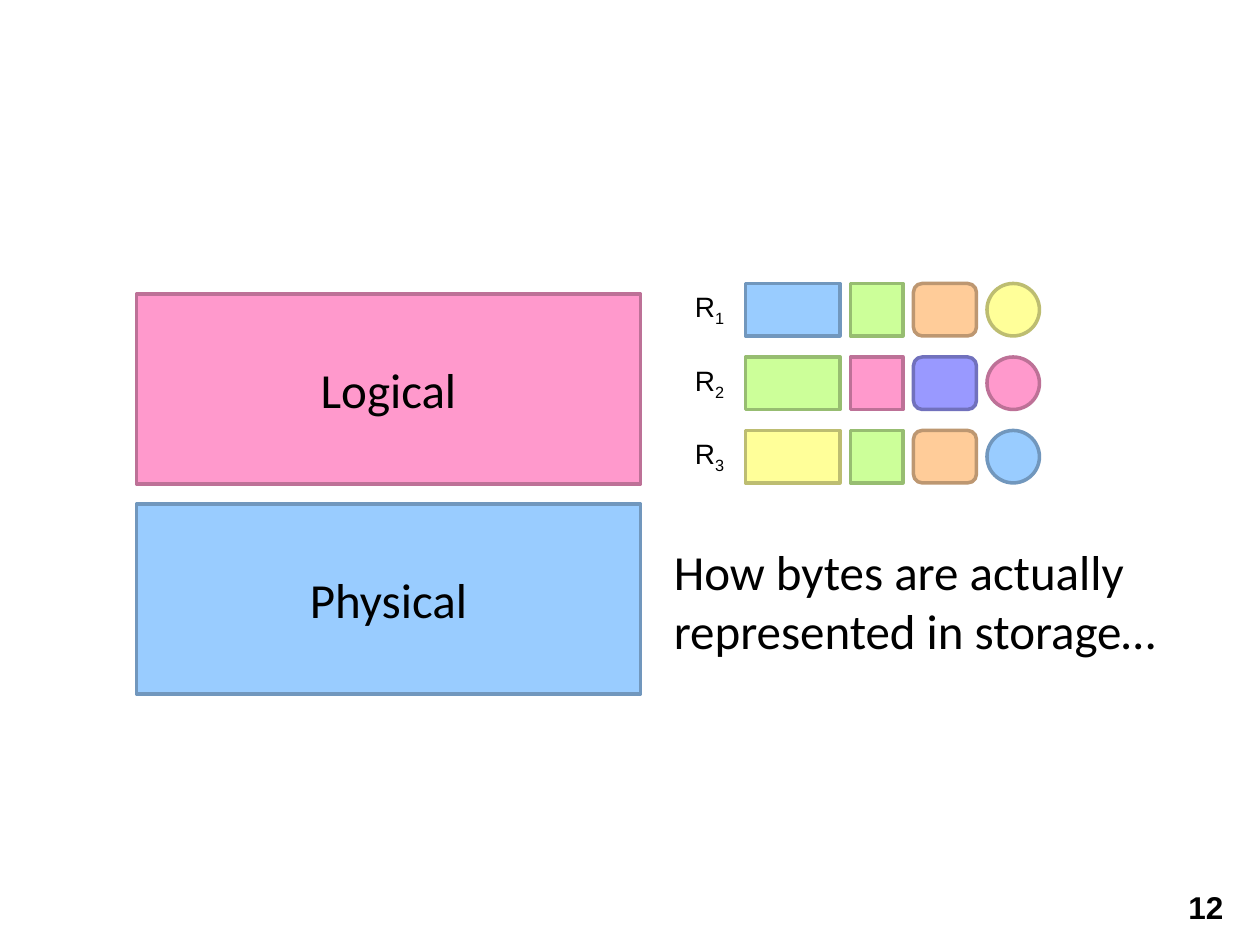
from dataclasses import dataclass

from pptx import Presentation
from pptx.dml.color import RGBColor
from pptx.enum.shapes import MSO_SHAPE
from pptx.enum.text import MSO_ANCHOR, PP_ALIGN
from pptx.oxml.ns import qn
from pptx.util import Pt

PX = 7620  # EMU per px, 120 px to the inch

RECT, ROUND, OVAL = MSO_SHAPE.RECTANGLE, MSO_SHAPE.ROUNDED_RECTANGLE, MSO_SHAPE.OVAL
MIDDLE, CENTER = MSO_ANCHOR.MIDDLE, PP_ALIGN.CENTER

BLACK = RGBColor(0x00, 0x00, 0x00)
PINK = RGBColor(0xFF, 0x99, 0xCC)
BLUE = RGBColor(0x99, 0xCC, 0xFF)
GREEN = RGBColor(0xCC, 0xFF, 0x99)
ORANGE = RGBColor(0xFF, 0xCC, 0x99)
YELLOW = RGBColor(0xFF, 0xFF, 0x99)
VIOLET = RGBColor(0x99, 0x99, 0xFF)
OUTLINE = {
    PINK: RGBColor(0xBD, 0x71, 0x97),
    BLUE: RGBColor(0x71, 0x97, 0xBD),
    GREEN: RGBColor(0x97, 0xBD, 0x71),
    ORANGE: RGBColor(0xBD, 0x97, 0x71),
    YELLOW: RGBColor(0xBD, 0xBD, 0x71),
    VIOLET: RGBColor(0x71, 0x71, 0xBD),
}

BODY = {"name": "Calibri", "size": Pt(28)}
LABEL = {"name": "Arial", "size": Pt(16)}
NUMBER = {"name": "Arial", "size": Pt(18), "bold": True}


@dataclass(frozen=True)
class Area:
    left: int
    top: int
    width: int
    height: int

    def emu(self) -> tuple[int, ...]:
        return tuple(v * PX for v in (self.left, self.top, self.width, self.height))


@dataclass(frozen=True)
class Field:
    kind: MSO_SHAPE
    left: int
    width: int


@dataclass(frozen=True)
class Record:
    index: str
    colors: tuple[RGBColor, ...]


@dataclass(frozen=True)
class Level:
    name: str
    top: int
    color: RGBColor


LEVELS = (Level("Logical", 280, PINK), Level("Physical", 480, BLUE))
FIELDS = (
    Field(RECT, 710, 90),
    Field(RECT, 810, 50),
    Field(ROUND, 870, 60),
    Field(OVAL, 940, 50),
)
RECORDS = (
    Record("1", (BLUE, GREEN, ORANGE, YELLOW)),
    Record("2", (GREEN, PINK, VIOLET, PINK)),
    Record("3", (YELLOW, GREEN, ORANGE, BLUE)),
)
RECORD_TOP, RECORD_STEP, RECORD_HEIGHT = 270, 70, 50


def add_span(para, text: str, style: dict):
    span = para.add_run()
    span.text = text
    for key, value in style.items():
        setattr(span.font, key, value)
    span.font.color.rgb = BLACK
    return span


def add_box(shapes, kind: MSO_SHAPE, area: Area, color: RGBColor):
    box = shapes.add_shape(kind, *area.emu())
    box.shadow.inherit = False
    box.fill.solid()
    box.fill.fore_color.rgb = color
    box.line.color.rgb = OUTLINE[color]
    box.line.width = Pt(2)
    return box


def add_text(shapes, area: Area, text: str, style: dict, wrap: bool = True):
    box = shapes.add_textbox(*area.emu())
    box.text_frame.word_wrap = wrap
    para = box.text_frame.paragraphs[0]
    add_span(para, text, style)
    return para


def add_level(page, level: Level) -> None:
    box = add_box(page.shapes, RECT, Area(130, level.top, 480, 181), level.color)
    box.text_frame.vertical_anchor = MIDDLE
    para = box.text_frame.paragraphs[0]
    para.alignment = CENTER
    add_span(para, level.name, BODY)


def add_record(page, record: Record, top: int) -> None:
    shapes = page.shapes.add_group_shape().shapes
    para = add_text(shapes, Area(650, top, 54, 44), "R", LABEL, wrap=False)
    subscript = add_span(para, record.index, LABEL)
    subscript.font._element.set("baseline", "-25000")
    for field, color in zip(FIELDS, record.colors):
        area = Area(field.left, top, field.width, RECORD_HEIGHT)
        add_box(shapes, field.kind, area, color)


def main() -> None:
    deck = Presentation()
    deck.slide_width, deck.slide_height = 1200 * PX, 900 * PX
    page = deck.slides.add_slide(deck.slide_layouts[6])

    # Storage levels
    for level in LEVELS:
        add_level(page, level)
    add_text(page.shapes, Area(630, 510, 530, 125),
             "How bytes are actually represented in storage…", BODY)

    # Records of the logical level
    for row, record in enumerate(RECORDS):
        add_record(page, record, RECORD_TOP + row * RECORD_STEP)

    # Page number
    add_text(page.shapes, Area(1120, 840, 70, 48), "12", NUMBER)

    deck.save("out.pptx")


if __name__ == "__main__":
    main()
